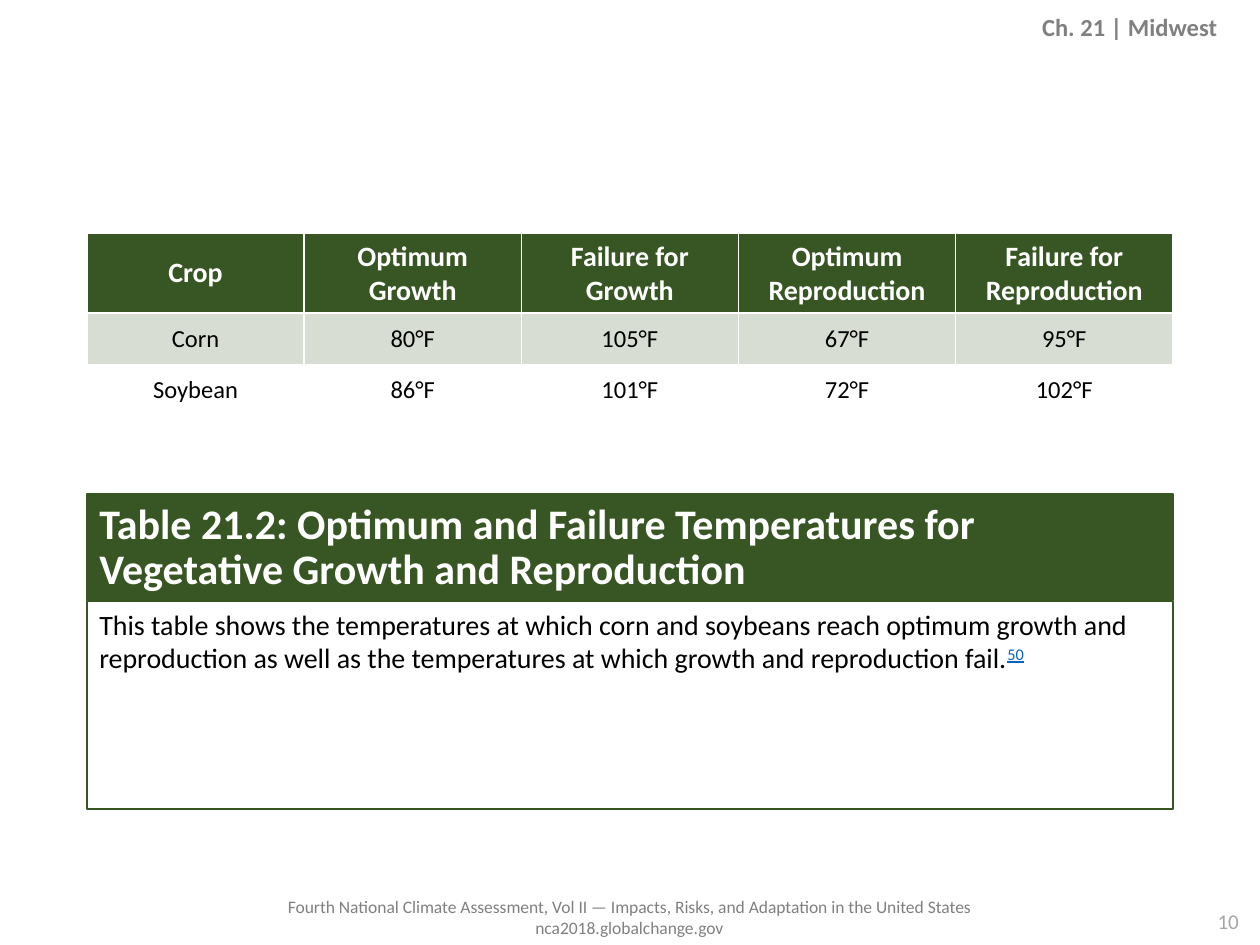
from lxml import etree
from pptx import Presentation
from pptx.dml.color import RGBColor
from pptx.enum.shapes import MSO_SHAPE
from pptx.enum.text import MSO_ANCHOR, PP_ALIGN
from pptx.oxml.ns import qn
from pptx.util import Inches, Pt

LEFT, CENTER, RIGHT = PP_ALIGN.LEFT, PP_ALIGN.CENTER, PP_ALIGN.RIGHT
TOP, MIDDLE, BOTTOM = MSO_ANCHOR.TOP, MSO_ANCHOR.MIDDLE, MSO_ANCHOR.BOTTOM
RECTANGLE = MSO_SHAPE.RECTANGLE

COLORS = {
    "green": "385623",
    "band": "D7DDD3",
    "white": "FFFFFF",
    "black": "000000",
    "gray": "808080",
    "light_gray": "A6A6A6",
    "link": "0563C1",
}
MARGIN, CONTENT_WIDTH = 0.69, 8.62
CROP_ROWS = [
    ["Crop", "Optimum Growth", "Failure for Growth",
     "Optimum Reproduction", "Failure for Reproduction"],
    ["Corn", "80°F", "105°F", "67°F", "95°F"],
    ["Soybean", "86°F", "101°F", "72°F", "102°F"],
]
ROW_HEIGHTS = [0.62, 0.41, 0.41]


def rgb(name):
    return RGBColor.from_string(COLORS[name])


def add_run(paragraph, text, *, size, color, font, bold=False, underline=None, baseline=None):
    run = paragraph.add_run()
    run.text = text
    run.font.name = font
    run.font.size = Pt(size)
    run.font.bold = bold
    run.font.underline = underline
    run.font.color.rgb = rgb(color)
    if baseline:
        run.font._element.set("baseline", str(baseline * 1000))


def add_borders(cell, color, width):
    properties = cell._tc.get_or_add_tcPr()
    for side in ("lnL", "lnR", "lnT", "lnB"):
        line = etree.SubElement(properties, qn(f"a:{side}"), w=str(Pt(width)))
        fill = etree.SubElement(line, qn("a:solidFill"))
        etree.SubElement(fill, qn("a:srgbClr"), val=COLORS[color])


class SlideBuilder:
    """Holds the font and the slide that elements are added to."""

    def __init__(self, slide, font="Calibri"):
        self.slide = slide
        self.font = font

    def fill_text(self, frame, lines, *, align=LEFT, anchor=TOP, spacing=None, after=None, **style):
        """Fill a text frame with one paragraph per line and return the last one."""
        frame.word_wrap = True
        frame.vertical_anchor = anchor
        for index, line in enumerate(lines):
            paragraph = frame.add_paragraph() if index else frame.paragraphs[0]
            paragraph.alignment = align
            paragraph.line_spacing = spacing
            if after is not None:
                paragraph.space_after = Pt(after)
            add_run(paragraph, line, font=self.font, **style)
        return paragraph

    def text(self, box, lines, **style):
        label = self.slide.shapes.add_textbox(*map(Inches, box))
        return self.fill_text(label.text_frame, lines, **style)

    def panel(self, box, lines, *, fill=None, **style):
        panel = self.slide.shapes.add_shape(RECTANGLE, *map(Inches, box))
        panel.shadow.inherit = False
        if fill:
            panel.fill.solid()
            panel.fill.fore_color.rgb = rgb(fill)
        else:
            panel.fill.background()
        panel.line.color.rgb = rgb("green")
        panel.line.width = Pt(1.5)
        return self.fill_text(panel.text_frame, lines, **style)

    def table(self, left, top, width, rows, heights):
        """Add a table whose first row is the header and whose columns are equal."""
        box = map(Inches, (left, top, width, sum(heights)))
        table = self.slide.shapes.add_table(len(rows), len(rows[0]), *box).table
        table.horz_banding = False
        fills = ["green", "band", "white"]
        for row_index, values in enumerate(rows):
            table.rows[row_index].height = Inches(heights[row_index])
            header = row_index == 0
            for column_index, value in enumerate(values):
                cell = table.cell(row_index, column_index)
                add_borders(cell, "white", 1)
                cell.fill.solid()
                cell.fill.fore_color.rgb = rgb(fills[row_index])
                self.fill_text(cell.text_frame, [value], align=CENTER,
                               size=16 if header else 14, bold=header,
                               color="white" if header else "black")
                cell.vertical_anchor = MIDDLE


def main():
    presentation = Presentation()
    presentation.slide_width = Inches(10)
    presentation.slide_height = Inches(7.5)
    builder = SlideBuilder(presentation.slides.add_slide(presentation.slide_layouts[6]))

    builder.text((2.03, 7.06, 5.93, 0.44),
                 ["Fourth National Climate Assessment, Vol II — Impacts, Risks, "
                  "and Adaptation in the United States",
                  "nca2018.globalchange.gov"],
                 align=CENTER, size=10, color="gray")
    builder.text((8.02, 7.16, 1.91, 0.27), ["10"],
                 align=RIGHT, size=12, color="light_gray")
    builder.table(MARGIN, 1.85, CONTENT_WIDTH, CROP_ROWS, ROW_HEIGHTS)
    builder.panel((MARGIN, 3.92, CONTENT_WIDTH, 0.84),
                  ["Table 21.2: Optimum and Failure Temperatures for "
                   "Vegetative Growth and Reproduction"],
                  fill="green", anchor=BOTTOM, spacing=0.9,
                  size=24, color="white", bold=True)
    description = builder.panel(
        (MARGIN, 4.77, CONTENT_WIDTH, 1.65),
        ["This table shows the temperatures at which corn and soybeans reach optimum growth "
         "and reproduction as well as the temperatures at which growth and reproduction fail."],
        after=6, size=16, color="black")
    add_run(description, "50", font=builder.font, size=16, color="link",
            underline=True, baseline=30)
    builder.text((0.23, 0.07, 9.53, 0.31), ["Ch. 21 | Midwest"],
                 align=RIGHT, anchor=MIDDLE, spacing=0.9,
                 size=14, color="gray", bold=True)

    presentation.save("out.pptx")


if __name__ == "__main__":
    main()
